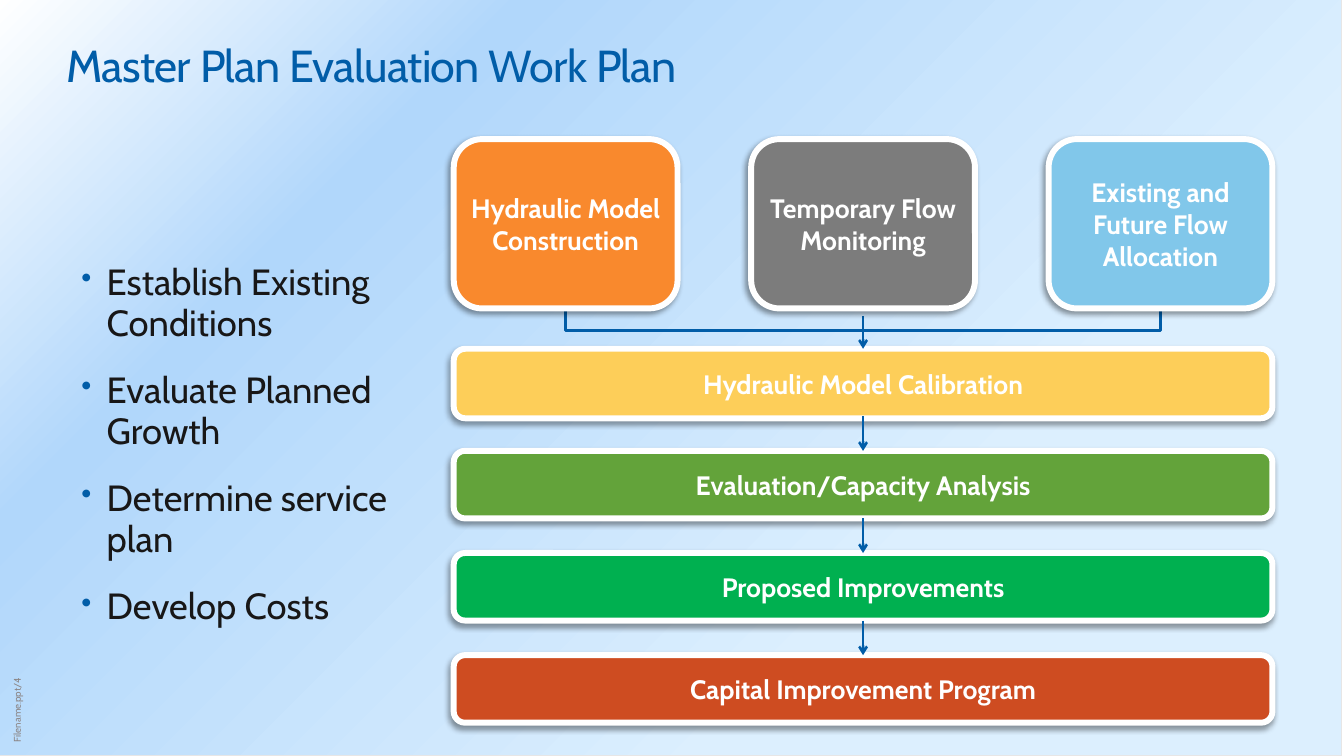
from pptx import Presentation
from pptx.dml.color import RGBColor
from pptx.enum.shapes import MSO_CONNECTOR, MSO_SHAPE
from pptx.enum.text import MSO_ANCHOR, PP_ALIGN
from pptx.oxml import parse_xml
from pptx.oxml.ns import nsdecls, qn
from pptx.util import Inches, Pt

RECT, ROUND = MSO_SHAPE.RECTANGLE, MSO_SHAPE.ROUNDED_RECTANGLE
STRAIGHT, ELBOW = MSO_CONNECTOR.STRAIGHT, MSO_CONNECTOR.ELBOW
TOP, MIDDLE, BOTTOM = MSO_ANCHOR.TOP, MSO_ANCHOR.MIDDLE, MSO_ANCHOR.BOTTOM
LEFT, CENTER = PP_ALIGN.LEFT, PP_ALIGN.CENTER

FONT = "Cabin"
BLUE = RGBColor(0x01, 0x5D, 0xA8)
INK = RGBColor(0x18, 0x17, 0x17)
GRAY = RGBColor(0x8B, 0x85, 0x85)
WHITE = RGBColor(0xFF, 0xFF, 0xFF)
EDGE = RGBColor(0xE7, 0xE6, 0xE6)

STEPS = [
    ("Hydraulic Model Construction", RGBColor(0xF9, 0x89, 0x2D)),
    ("Temporary Flow Monitoring", RGBColor(0x7C, 0x7C, 0x7C)),
    ("Existing and Future Flow Allocation", RGBColor(0x81, 0xC7, 0xEA)),
]
BARS = [
    ("Hydraulic Model Calibration", RGBColor(0xFD, 0xCE, 0x59)),
    ("Evaluation/Capacity Analysis", RGBColor(0x63, 0xA3, 0x3A)),
    ("Proposed Improvements", RGBColor(0x00, 0xB0, 0x50)),
    ("Capital Improvement Program", RGBColor(0xCE, 0x4C, 0x21)),
]
GOALS = ["Establish Existing Conditions", "Evaluate Planned Growth",
         "Determine service plan", "Develop Costs"]
STOPS = [(30, "DCEFFE"), (75, "B1D7FB"), (100, "FFFFFF")]


def xml(text):
    """Make a drawing element from its tag and content."""
    tag, rest = text[:-1].split(">", 1) if ">" in text[:-1] else (text[:-2], "")
    if not rest:
        return parse_xml(f"{tag} {nsdecls('a')}/>")
    return parse_xml(f"{tag} {nsdecls('a')}>{rest}>")


def write(shape, lines, size, color, bold=False, align=LEFT, anchor=TOP,
          inset=(0.1, 0.05), track=None, bullet=False):
    frame = shape.text_frame
    frame.word_wrap = True
    frame.vertical_anchor = anchor
    frame.margin_left = frame.margin_right = Inches(inset[0])
    frame.margin_top = frame.margin_bottom = Inches(inset[1])
    for i, line in enumerate(lines):
        para = frame.add_paragraph() if i else frame.paragraphs[0]
        para.alignment = align
        run = para.add_run()
        run.text = line
        font = run.font
        font.name, font.size, font.bold = FONT, Pt(size), bold
        font.color.rgb = color
        if track:
            run._r.get_or_add_rPr().set("spc", str(track))
        if bullet:
            mark(para)


def mark(para):
    para.line_spacing, para.space_before = 0.95, Pt(18)
    props = para._p.get_or_add_pPr()
    props.set("marL", str(Inches(0.25)))
    props.set("indent", str(Inches(-0.25)))
    props.append(xml(f'<a:buClr><a:srgbClr val="{BLUE}"/></a:buClr>'))
    props.append(xml('<a:buSzPct val="82000"/>'))
    props.append(xml('<a:buChar char="•"/>'))


def label(slide, box, lines, size, color, **style):
    shape = slide.shapes.add_textbox(*map(Inches, box))
    write(shape, lines, size, color, **style)
    return shape


def card(slide, box, text, color):
    shape = slide.shapes.add_shape(ROUND, *map(Inches, box))
    shape.fill.solid()
    shape.fill.fore_color.rgb = color
    shape.line.color.rgb, shape.line.width = WHITE, Pt(4.25)
    shape.shadow.inherit = False
    shape._element.spPr.find(qn("a:effectLst")).append(xml(
        f'<a:outerShdw blurRad="{Pt(4)}" dist="{Pt(3)}" dir="8100000" '
        'algn="tr" rotWithShape="0"><a:srgbClr val="000000">'
        '<a:alpha val="40000"/></a:srgbClr></a:outerShdw>'))
    write(shape, [text], 19, WHITE, bold=True, align=CENTER, anchor=MIDDLE,
          inset=(0, 0))


def link(slide, start, end, kind=STRAIGHT):
    line = slide.shapes.add_connector(kind, *map(Inches, start + end))
    line.line.color.rgb, line.line.width = BLUE, Pt(1.75)
    props = line._element.spPr
    if kind == ELBOW:
        props.find(qn("a:prstGeom")).set("prst", "bentConnector2")
    else:
        props.find(qn("a:ln")).append(xml('<a:tailEnd type="arrow"/>'))
    props.append(xml("<a:effectLst/>"))


def backdrop(slide, box):
    shape = slide.shapes.add_shape(RECT, *map(Inches, box))
    shape.shadow.inherit = False
    shape.line.color.rgb, shape.line.width = EDGE, Pt(0.75)
    shape.fill.background()
    stops = "".join(f'<a:gs pos="{pos * 1000}"><a:srgbClr val="{color}"/></a:gs>'
                    for pos, color in STOPS)
    props = shape._element.spPr
    props.replace(props.find(qn("a:noFill")), xml(
        f'<a:gradFill><a:gsLst>{stops}</a:gsLst><a:path path="circle">'
        '<a:fillToRect l="100000" t="100000"/></a:path></a:gradFill>'))


def flow(slide, box):
    left, top, width, height = box
    mid = left + width / 2
    wide, tall = 2.22, 1.68
    bar, first = 0.67, top + 2.08
    step = (width - wide) / (len(STEPS) - 1)
    pitch = (top + height - bar - first) / (len(BARS) - 1)

    # Outer cards join the middle arrow
    join = top + tall + 0.22
    for x in (left + wide / 2, left + width - wide / 2):
        link(slide, (mid, join), (x, top + tall), ELBOW)
    # Stacked bars, each with an arrow from above
    for i, (text, color) in enumerate(BARS):
        y = first + i * pitch
        gap = pitch - bar if i else 0.32
        card(slide, (left, y, width, bar if i else 0.69), text, color)
        link(slide, (mid, y - gap), (mid, y))
    # Top row of cards
    for i, (text, color) in enumerate(STEPS):
        card(slide, (left + i * step, top, wide, tall), text, color)


def main():
    deck = Presentation()
    deck.slide_width, deck.slide_height = Inches(13.33), Inches(7.5)
    slide = deck.slides.add_slide(deck.slide_layouts[6])

    backdrop(slide, (-0.02, 0, 13.33, 7.5))
    # File name up the left edge
    name = label(slide, (-1.17, 5.97, 2.67, 0.22), ["Filename.ppt/4"], 7, GRAY,
                 anchor=BOTTOM, inset=(0.05, 0.05))
    name.rotation = 270
    label(slide, (0.56, 0.33, 12.22, 1.17), ["Master Plan Evaluation Work Plan"],
          32, BLUE, track=-50)
    flow(slide, (4.5, 1.38, 8.12, 5.79))
    label(slide, (0.71, 2.55, 3.91, 3.73), GOALS, 26, INK, bullet=True)
    deck.save("out.pptx")


if __name__ == "__main__":
    main()
